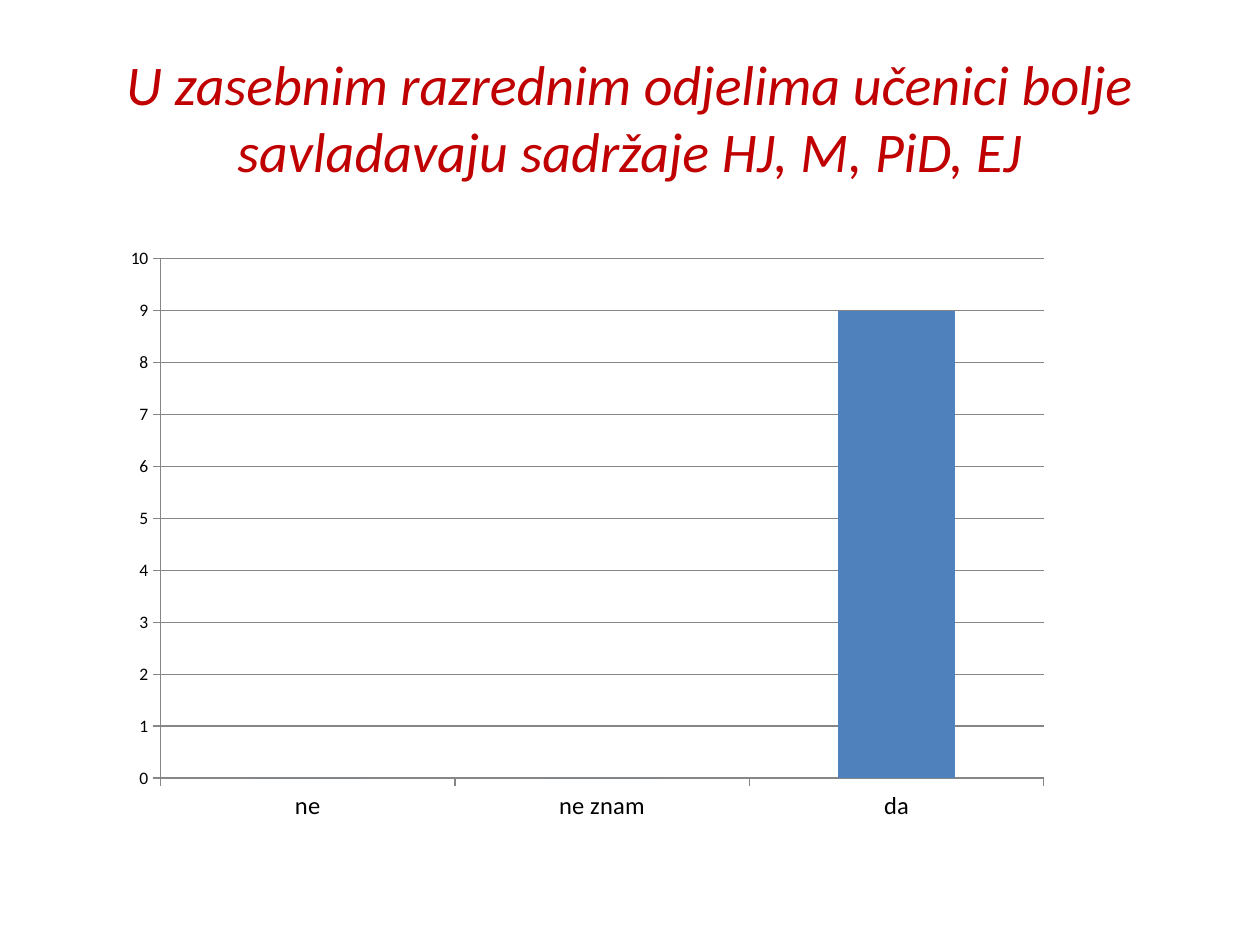
from lxml import etree
from pptx import Presentation
from pptx.chart.data import CategoryChartData
from pptx.dml.color import RGBColor
from pptx.enum.chart import XL_CHART_TYPE as ChartType, XL_TICK_MARK as TickMark
from pptx.enum.text import MSO_ANCHOR as Anchor, PP_ALIGN as Align
from pptx.oxml.ns import qn
from pptx.util import Cm, Pt

FONT = "Calibri"
TITLE_RED = RGBColor(0xC0, 0x00, 0x00)
BAR_BLUE = RGBColor(0x4F, 0x81, 0xBD)
LINE_GRAY = RGBColor(0x86, 0x86, 0x86)
BLACK = RGBColor(0, 0, 0)

LEFT, WIDTH = Cm(1.27), Cm(22.86)


def set_font(font, size, color):
    font.name = FONT
    font.size = Pt(size)
    font.color.rgb = color


def add_title(slide, text):
    frame = slide.shapes.add_textbox(LEFT, Cm(0.76), WIDTH, Cm(3.18)).text_frame
    frame.word_wrap = True
    frame.vertical_anchor = Anchor.MIDDLE
    paragraph = frame.paragraphs[0]
    paragraph.text = text
    paragraph.alignment = Align.CENTER
    set_font(paragraph.font, 32, TITLE_RED)
    paragraph.font.italic = True


def set_plot_layout(chart, x, y, w, h):
    """Fix the inner plot area as fractions of the chart."""
    plot_area = chart._chartSpace.chart.plotArea
    for old_layout in plot_area.findall(qn("c:layout")):
        plot_area.remove(old_layout)
    layout = etree.Element(qn("c:layout"))
    manual = etree.SubElement(layout, qn("c:manualLayout"))
    settings = [("layoutTarget", "inner"), ("xMode", "edge"), ("yMode", "edge"),
                ("x", x), ("y", y), ("w", w), ("h", h)]
    for tag, value in settings:
        etree.SubElement(manual, qn(f"c:{tag}"), val=str(value))
    plot_area.insert(0, layout)


def style_axis(axis, size):
    axis.major_tick_mark = TickMark.OUTSIDE
    axis.minor_tick_mark = TickMark.NONE
    axis.format.line.color.rgb = LINE_GRAY
    axis.format.line.width = Pt(0.75)
    set_font(axis.tick_labels.font, size, BLACK)


def add_answer_chart(slide, answers):
    data = CategoryChartData()
    data.categories = list(answers)
    data.add_series("Series 1", list(answers.values()))
    chart = slide.shapes.add_chart(
        ChartType.COLUMN_CLUSTERED, LEFT, Cm(4.45), WIDTH, Cm(12.57), data).chart
    chart.has_legend = False
    chart.has_title = False
    set_font(chart.font, 10, BLACK)

    plot = chart.plots[0]
    plot.gap_width = 150
    plot.vary_by_categories = False
    fill = plot.series[0].format.fill
    fill.solid()
    fill.fore_color.rgb = BAR_BLUE

    style_axis(chart.category_axis, 14)
    value_axis = chart.value_axis
    style_axis(value_axis, 10)
    value_axis.minimum_scale = 0
    value_axis.maximum_scale = 10
    value_axis.major_unit = 1
    grid_line = value_axis.major_gridlines.format.line
    grid_line.color.rgb = LINE_GRAY
    grid_line.width = Pt(0.75)
    set_plot_layout(chart, 0.086, 0.061, 0.779, 0.833)


def main():
    presentation = Presentation()
    presentation.slide_width = Cm(25.4)
    presentation.slide_height = Cm(19.05)
    slide = presentation.slides.add_slide(presentation.slide_layouts[6])
    add_title(slide, "U zasebnim razrednim odjelima učenici bolje "
                     "savladavaju sadržaje HJ, M, PiD, EJ")
    add_answer_chart(slide, {"ne": 0, "ne znam": 0, "da": 9})
    presentation.save("out.pptx")


if __name__ == "__main__":
    main()
